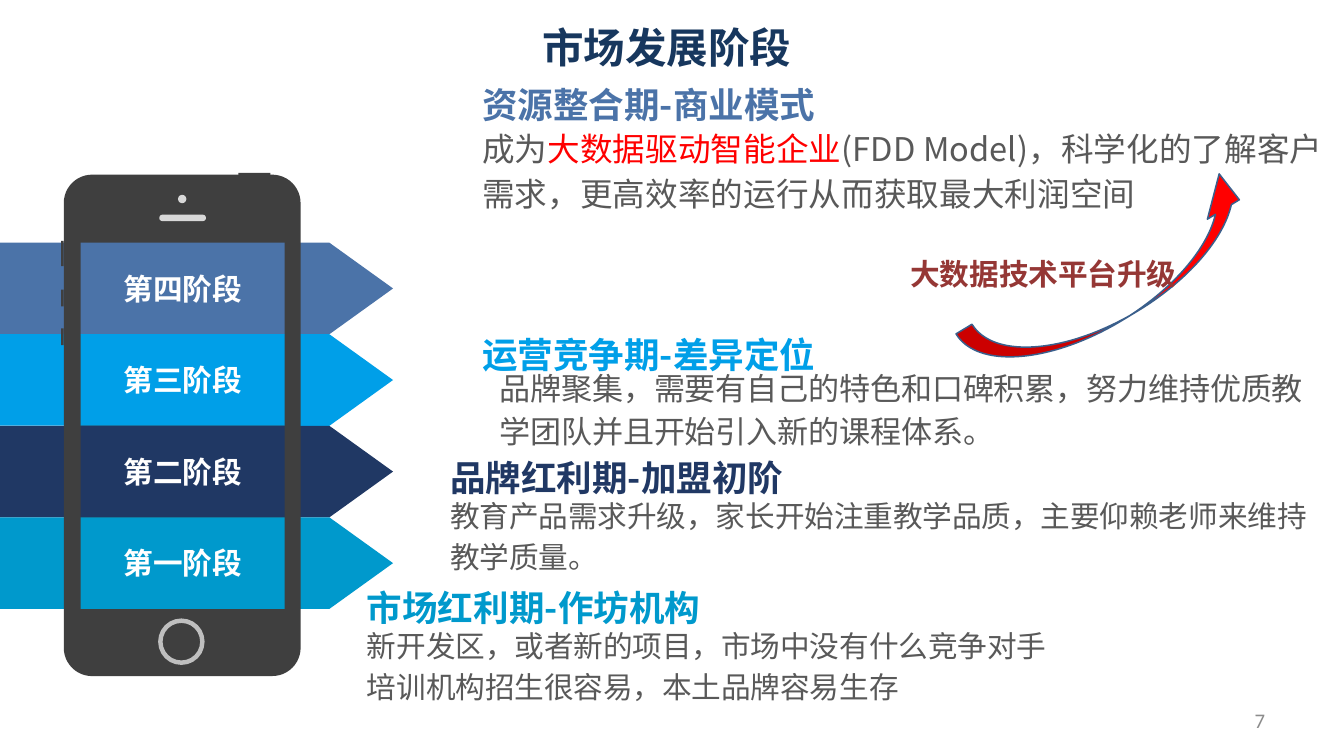
from pptx import Presentation
from pptx.dml.color import RGBColor
from pptx.enum.shapes import MSO_SHAPE as SHAPE
from pptx.enum.text import MSO_ANCHOR as ANCHOR, MSO_AUTO_SIZE as AUTO, PP_ALIGN as ALIGN
from pptx.oxml.ns import qn
from pptx.util import Cm, Pt
from lxml import etree

NOTO, CALIBRI = "Noto Sans CJK SC", "Calibri"
BLUE, SKY, NAVY, TEAL = "4B73A8", "009FE8", "203864", "0099CC"
DARK, GREY, LIGHT, RED = "3F3F3F", "595959", "D8D8D8", "FF0000"

STAGES = [("第四阶段", BLUE), ("第三阶段", SKY), ("第二阶段", NAVY), ("第一阶段", TEAL)]
STAGE_TOP, STAGE_H = 2.89, 1.09

# Heading, colour, heading box, body paragraphs (runs of text and colour), size, font, body box
PHASES = [
    ("运营竞争期-差异定位", SKY, (5.61, 3.91, 6.55, 0.64),
     [[("品牌聚集，需要有自己的特色和口碑积累，努力维持优质教学团队并且开始引入新的课程体系。", GREY)]],
     10.5, NOTO, (5.82, 4.29, 10.11, 1.14)),
    ("品牌红利期-加盟初阶", NAVY, (5.23, 5.38, 5.94, 0.64),
     [[("教育产品需求升级，家长开始注重教学品质，主要仰赖老师来维持教学质量。", GREY)]],
     10, NOTO, (5.23, 5.82, 10.72, 1.09)),
    ("市场红利期-作坊机构", TEAL, (4.24, 6.93, 5.36, 0.64),
     [[("新开发区，或者新的项目，市场中没有什么竞争对手", GREY)],
      [("培训机构招生很容易，本土品牌容易生存", GREY)]],
     10, CALIBRI, (4.24, 7.37, 10.31, 1.09)),
    ("资源整合期-商业模式", BLUE, (5.61, 0.94, 4.93, 0.64),
     [[("成为", GREY), ("大数据驱动智能企业", RED),
       ("(FDD Model)，科学化的了解客户需求，更高效率的运行从而获取最大利润空间", GREY)]],
     11, NOTO, (5.61, 1.42, 10.31, 1.19)),
]


def rgb(color):
    return RGBColor.from_string(color)


def format_run(r, size, color, bold=False, font=NOTO):
    r.font.size, r.font.bold, r.font.name = Pt(size), bold, font
    r.font.color.rgb = rgb(color)
    ea = etree.SubElement(r._r.get_or_add_rPr(), qn("a:ea"))
    ea.set("typeface", NOTO)


def set_margins(tf, x, y):
    tf.margin_left = tf.margin_right = Cm(x)
    tf.margin_top = tf.margin_bottom = Cm(y)


def add_block(slide, kind, box, fill=None, line=None, line_width=0.75, adj=()):
    s = slide.shapes.add_shape(kind, *map(Cm, box))
    s.shadow.inherit = False
    for i, value in enumerate(adj):
        s.adjustments[i] = value
    if fill:
        s.fill.solid()
        s.fill.fore_color.rgb = rgb(fill)
    else:
        s.fill.background()
    if line:
        s.line.color.rgb = rgb(line)
        s.line.width = Pt(line_width)
    else:
        s.line.fill.background()
    return s


def add_text(slide, box, paragraphs, size, bold=False, font=NOTO, spacing=None,
             margins=(0.13, 0.05), wrap=True):
    tf = slide.shapes.add_textbox(*map(Cm, box)).text_frame
    tf.word_wrap, tf.auto_size = wrap, AUTO.SHAPE_TO_FIT_TEXT
    set_margins(tf, *margins)
    for i, runs in enumerate(paragraphs):
        p = tf.add_paragraph() if i else tf.paragraphs[0]
        p.line_spacing = spacing
        for text, color in runs:
            r = p.add_run()
            r.text = text
            format_run(r, size, color, bold, font)
    return tf


def add_title(slide):
    s = slide.shapes.title
    s.left, s.top, s.width, s.height = map(Cm, (2.24, 0.13, 10.72, 0.86))
    tf = s.text_frame
    tf.text = "市场发展阶段"
    tf.word_wrap, tf.auto_size = True, AUTO.SHAPE_TO_FIT_TEXT
    tf.vertical_anchor = ANCHOR.TOP
    set_margins(tf, 0.25, 0.13)
    tf.margin_left = Cm(0.93)
    tf.paragraphs[0].alignment = ALIGN.CENTER
    format_run(tf.paragraphs[0].runs[0], 14, "17375E", True, "TeX Gyre Adventor")


def add_stage_row(slide, kind, left, width, adj=()):
    return [add_block(slide, kind, (left, STAGE_TOP + i * STAGE_H, width, STAGE_H), color, adj=adj)
            for i, (_, color) in enumerate(STAGES)]


def add_phone(slide):
    add_block(slide, SHAPE.ROUNDED_RECTANGLE, (0.76, 2.08, 2.82, 5.97), DARK, adj=[0.12])
    # Side and top buttons
    for box in [(0.73, 2.87, 0.03, 0.3), (0.73, 3.45, 0.03, 0.2),
                (0.73, 3.91, 0.03, 0.2), (2.84, 2.06, 0.38, 0.08)]:
        add_block(slide, SHAPE.RECTANGLE, box, DARK)
    # Home button, speaker and camera
    add_block(slide, SHAPE.OVAL, (1.91, 7.39, 0.5, 0.5), line="BFBFBF", line_width=1.5)
    add_block(slide, SHAPE.ROUNDED_RECTANGLE, (1.91, 2.57, 0.53, 0.05), LIGHT, LIGHT, adj=[0.5])
    add_block(slide, SHAPE.OVAL, (2.12, 2.32, 0.1, 0.1), LIGHT)


def add_stages(slide):
    add_stage_row(slide, SHAPE.RECTANGLE, 0, 2.11)
    add_stage_row(slide, SHAPE.PENTAGON, 1.63, 3.05, [0.695])
    add_phone(slide)
    # Labels on the phone screen
    screen = add_stage_row(slide, SHAPE.RECTANGLE, 0.96, 2.43)
    for s, (name, _) in zip(screen, STAGES):
        tf = s.text_frame
        tf.text = name
        tf.vertical_anchor = ANCHOR.MIDDLE
        tf.paragraphs[0].alignment = ALIGN.CENTER
        format_run(tf.paragraphs[0].runs[0], 10, "FFFFFF", True)


def add_upgrade_arrow(slide):
    s = add_block(slide, SHAPE.CURVED_UP_ARROW, (11.33, 2.9, 3.89, 0.89), RED,
                  "3A5F8C", 0.5, [0.25, 0.5, 0.436])
    s.rotation = 328.7
    add_text(slide, (10.59, 2.92, 3.71, 0.69), [[("大数据技术平台升级", "953735")]], 10,
             bold=True, margins=(0.25, 0.13), wrap=False)


def add_page_number(slide):
    tf = add_text(slide, (11.48, 8.33, 3.73, 0.48), [[("7", "8C8C8C")]], 7,
                  font=CALIBRI, margins=(0.15, 0.08))
    tf.auto_size = AUTO.NONE
    tf.vertical_anchor = ANCHOR.MIDDLE
    tf.paragraphs[0].alignment = ALIGN.RIGHT


def main():
    prs = Presentation()
    prs.slide_width, prs.slide_height = Cm(16), Cm(9)
    slide = prs.slides.add_slide(prs.slide_layouts[5])
    add_title(slide)
    add_page_number(slide)
    add_stages(slide)
    for heading, color, heading_box, body, size, font, body_box in PHASES:
        add_text(slide, heading_box, [[(heading, color)]], 12, bold=True)
        add_text(slide, body_box, body, size, font=font, spacing=1.14)
    add_upgrade_arrow(slide)
    prs.save("out.pptx")


if __name__ == "__main__":
    main()
